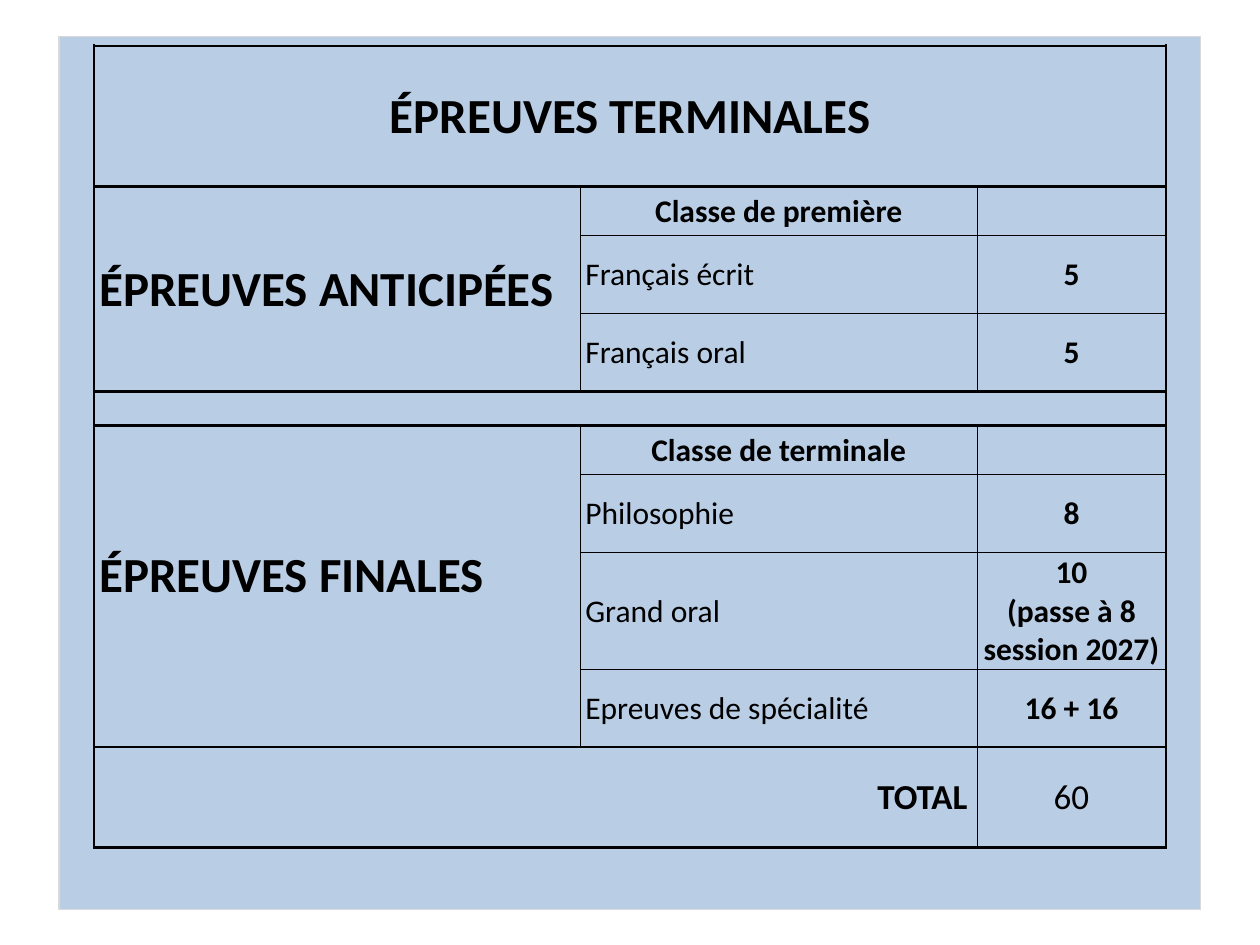
from lxml import etree
from pptx import Presentation
from pptx.dml.color import RGBColor
from pptx.enum.shapes import MSO_SHAPE
from pptx.enum.text import MSO_ANCHOR, PP_ALIGN
from pptx.oxml.ns import qn
from pptx.util import Cm, Pt

LEFT, CENTER, RIGHT = PP_ALIGN.LEFT, PP_ALIGN.CENTER, PP_ALIGN.RIGHT
MIDDLE = MSO_ANCHOR.MIDDLE
BLACK = "000000"
FONT = "Calibri"

COLUMN_WIDTHS = [9.8, 8, 3.8]
ROW_HEIGHTS = [2.84, 0.99, 1.57, 1.57, 0.69, 0.99, 1.57, 2.34, 1.57, 2.03]
HEAVY_ROW_EDGES = {0, 1, 4, 5, 9, 10}
HEAVY, THIN, NONE = 1.5, 0.5, 0

HEADING = {"size": 28, "bold": True, "align": LEFT, "side": 0.1}
TITLE = {"size": 28, "bold": True, "align": CENTER, "side": 0.03}
VALUE = {"size": 18, "bold": True, "align": CENTER, "side": 0.03}
SUBJECT = {"size": 18, "bold": False, "align": LEFT, "side": 0.1}
TOTAL_LABEL = {"size": 20, "bold": True, "align": RIGHT, "side": 0.2}
TOTAL_VALUE = {"size": 20, "bold": False, "align": CENTER, "side": 0.03}
EMPTY = {"size": 11, "bold": False, "align": LEFT, "side": 0.03}

TEXTS = {
    (0, 0): ("ÉPREUVES TERMINALES", TITLE),
    (1, 0): ("ÉPREUVES ANTICIPÉES", HEADING),
    (1, 1): ("Classe de première", VALUE),
    (2, 1): ("Français écrit", SUBJECT),
    (2, 2): ("5", VALUE),
    (3, 1): ("Français oral", SUBJECT),
    (3, 2): ("5", VALUE),
    (5, 0): ("ÉPREUVES FINALES", {**HEADING, "bottom": 0.46}),
    (5, 1): ("Classe de terminale", VALUE),
    (6, 1): ("Philosophie", SUBJECT),
    (6, 2): ("8", VALUE),
    (7, 1): ("Grand oral", SUBJECT),
    (7, 2): ("10\n(passe à 8 session 2027)", VALUE),
    (8, 1): ("Epreuves de spécialité", SUBJECT),
    (8, 2): ("16 + 16", VALUE),
    (9, 1): ("TOTAL", TOTAL_LABEL),
    (9, 2): ("60", TOTAL_VALUE),
}
MERGES = [(0, 0, 0, 2), (1, 0, 3, 0), (4, 0, 4, 2), (5, 0, 8, 0)]
OPEN_AREAS = MERGES + [(9, 0, 9, 1)]


def color(value):
    return RGBColor.from_string(value)


def edge_widths(row, column):
    area = (row, column, row, column)
    for candidate in OPEN_AREAS:
        top, left, bottom, right = candidate
        if top <= row <= bottom and left <= column <= right:
            area = candidate
    top, left, bottom, right = area
    is_merged = area in MERGES
    if is_merged:
        row, column, last_row, last_column = area
    else:
        last_row, last_column = row, column

    def vertical(edge):
        if left < edge <= right and not is_merged:
            return NONE
        return HEAVY if edge in (0, len(COLUMN_WIDTHS)) else THIN

    def horizontal(edge):
        return HEAVY if edge in HEAVY_ROW_EDGES else THIN

    return {
        "lnL": vertical(column),
        "lnR": vertical(last_column + 1),
        "lnT": horizontal(row),
        "lnB": horizontal(last_row + 1),
    }


def set_borders(cell, widths):
    properties = cell._tc.get_or_add_tcPr()
    for index, (side, width) in enumerate(widths.items()):
        line = etree.Element(qn(f"a:{side}"), w=str(Pt(width)))
        if width:
            fill = etree.SubElement(line, qn("a:solidFill"))
            etree.SubElement(fill, qn("a:srgbClr"), val=BLACK)
        else:
            etree.SubElement(line, qn("a:noFill"))
        properties.insert(index, line)


def set_text(cell, text, style):
    cell.text = text
    cell.vertical_anchor = MIDDLE
    cell.margin_left = cell.margin_right = Cm(style["side"])
    cell.margin_top = Cm(0.02)
    cell.margin_bottom = Cm(style.get("bottom", 0))
    for para in cell.text_frame.paragraphs:
        para.alignment = style["align"]
        para.font.name = FONT
        para.font.size = Pt(style["size"])
        para.font.bold = style["bold"]
        para.font.color.rgb = color(BLACK)


def add_panel(page):
    panel = page.shapes.add_shape(
        MSO_SHAPE.RECTANGLE, Cm(1.19), Cm(0.73), Cm(23.01), Cm(17.6))
    panel.shadow.inherit = False
    panel.fill.solid()
    panel.fill.fore_color.rgb = color("B9CDE5")
    panel.line.color.rgb = color("D9D9D9")
    panel.line.width = Pt(0.75)


def add_exam_table(page):
    frame = page.shapes.add_table(
        len(ROW_HEIGHTS), len(COLUMN_WIDTHS), Cm(1.9), Cm(0.92),
        Cm(sum(COLUMN_WIDTHS)), Cm(sum(ROW_HEIGHTS)))
    table = frame.table
    table.first_row = table.horz_banding = False
    for column, width in zip(table.columns, COLUMN_WIDTHS):
        column.width = Cm(width)
    for row, height in zip(table.rows, ROW_HEIGHTS):
        row.height = Cm(height)
    for top, left, bottom, right in MERGES:
        table.cell(top, left).merge(table.cell(bottom, right))
    for row in range(len(ROW_HEIGHTS)):
        for column in range(len(COLUMN_WIDTHS)):
            cell = table.cell(row, column)
            cell.fill.background()
            set_text(cell, *TEXTS.get((row, column), ("", EMPTY)))
            set_borders(cell, edge_widths(row, column))


def main():
    deck = Presentation()
    deck.slide_width, deck.slide_height = Cm(25.4), Cm(19.05)
    page = deck.slides.add_slide(deck.slide_layouts[6])
    add_panel(page)
    add_exam_table(page)
    deck.save("out.pptx")


if __name__ == "__main__":
    main()
